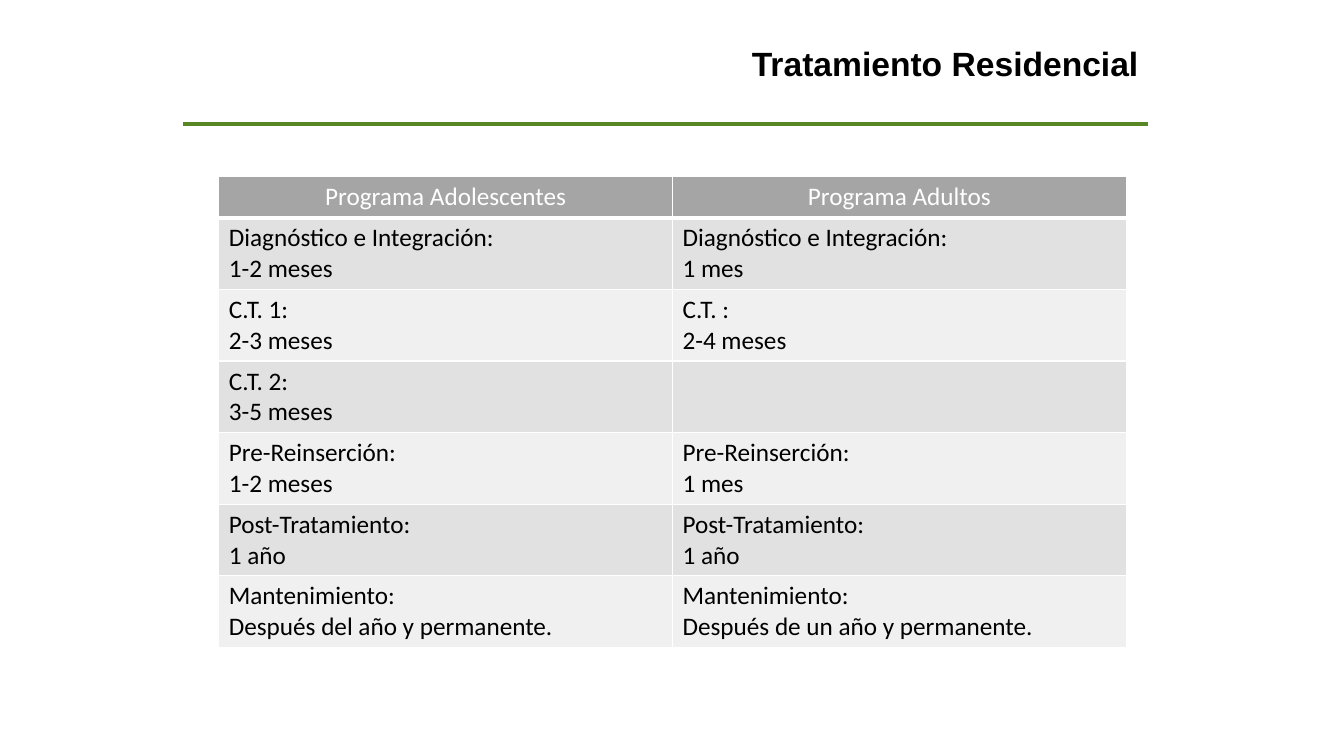
import pptx
import pptx.util
import pptx.dml.color
import pptx.enum.shapes
import pptx.enum.text
import pptx.oxml.ns
from lxml import etree

HUES = {"white": "FFFFFF", "black": "000000", "green": "588725",
        "head": "A5A5A5", "dark": "E1E1E1", "light": "F0F0F0"}
ALIGN = pptx.enum.text.PP_ALIGN
ROWS = [
    ("Programa Adolescentes", "Programa Adultos"),
    ("Diagnóstico e Integración:\n1-2 meses", "Diagnóstico e Integración:\n1 mes"),
    ("C.T. 1:\n2-3 meses", "C.T. :\n2-4 meses"),
    ("C.T. 2:\n3-5 meses", ""),
    ("Pre-Reinserción:\n1-2 meses", "Pre-Reinserción:\n1 mes"),
    ("Post-Tratamiento:\n1 año", "Post-Tratamiento:\n1 año"),
    ("Mantenimiento:\nDespués del año y permanente.",
     "Mantenimiento:\nDespués de un año y permanente."),
]


def px(num):
    return pptx.util.Emu(num * 9144)


def color(name):
    return pptx.dml.color.RGBColor.from_string(HUES[name])


def write(frame, text, size=18, font="Calibri", hue="black", bold=False, align=ALIGN.LEFT):
    frame.text = text
    for para in frame.paragraphs:
        para.alignment = align
        for style in [para.font] + [run.font for run in para.runs]:
            style.size = pptx.util.Pt(size)
            style.name = font
            style.bold = bold
            style.color.rgb = color(hue)


def tag(owner, name, **attrs):
    return etree.SubElement(owner, pptx.oxml.ns.qn(name), **attrs)


class Page:
    def __init__(self, deck):
        self.slide = deck.slides.add_slide(deck.slide_layouts[6])
        self.shapes = self.slide.shapes

    def edge(self, cell, side, width):
        line = tag(cell._tc.get_or_add_tcPr(), "a:ln" + side, w=str(pptx.util.Pt(width)))
        tag(tag(line, "a:solidFill"), "a:srgbClr", val=HUES["white"])

    def table(self, left, top, width, rows, first, rest):
        high = first + rest * (len(rows) - 1)
        grid = self.shapes.add_table(len(rows), len(rows[0]), px(left), px(top),
                                     px(width), px(high)).table
        for r, row in enumerate(rows):
            head = r == 0
            grid.rows[r].height = px(first if head else rest)
            fill = "head" if head else ("dark" if r % 2 else "light")
            for c, text in enumerate(row):
                cell = grid.cell(r, c)
                write(cell.text_frame, text, hue="white" if head else "black",
                      align=ALIGN.CENTER if head else ALIGN.LEFT)
                for side in "LRTB":
                    self.edge(cell, side, 3 if head and side == "B" else 1)
                cell.fill.solid()
                cell.fill.fore_color.rgb = color(fill)

    def rule(self, left, right, y, hue, width):
        kind = pptx.enum.shapes.MSO_CONNECTOR.STRAIGHT
        line = self.shapes.add_connector(kind, px(left), px(y), px(right), px(y))
        line.line.color.rgb = color(hue)
        line.line.width = pptx.util.Pt(width)
        tag(line._element.spPr, "a:effectLst")

    def label(self, left, top, width, height, text, **style):
        box = self.shapes.add_textbox(px(left), px(top), px(width), px(height))
        box.text_frame.word_wrap = True
        write(box.text_frame, text, **style)


def main():
    deck = pptx.Presentation()
    deck.slide_width, deck.slide_height = px(1333), px(750)
    page = Page(deck)
    page.table(217, 175, 900, ROWS, first=41, rest=71)
    page.rule(182, 1139, 123, "green", 3)
    page.label(533, 38, 606, 50, "Tratamiento Residencial", size=24, font="Arial",
               bold=True, align=ALIGN.RIGHT)
    deck.save("out.pptx")


if __name__ == "__main__":
    main()
